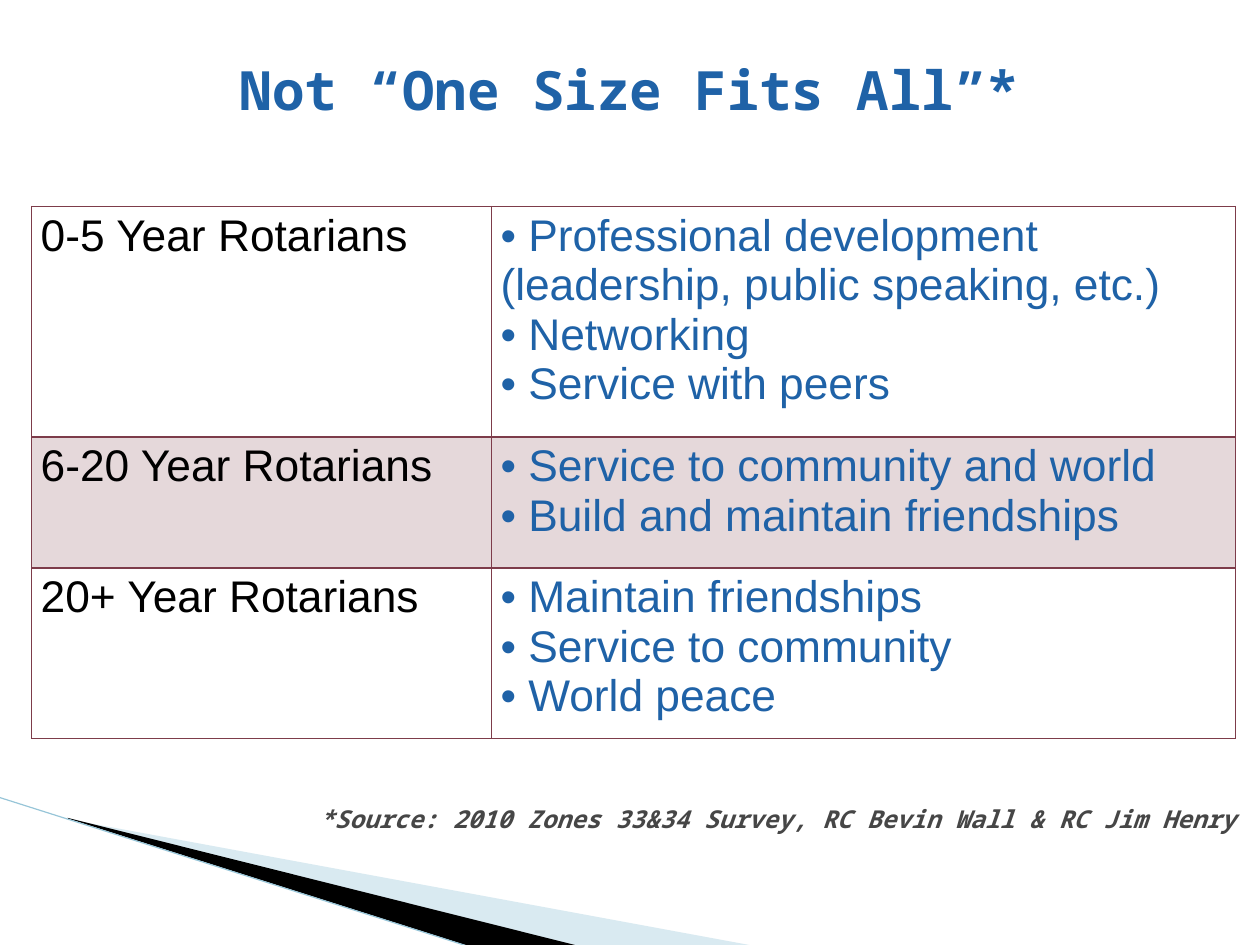
import pptx
import pptx.dml.color
import pptx.enum.text
import pptx.oxml.ns
import pptx.util
from lxml import etree

Pt = pptx.util.Pt
RGBColor = pptx.dml.color.RGBColor
qn = pptx.oxml.ns.qn
PP_ALIGN = pptx.enum.text.PP_ALIGN
MSO_ANCHOR = pptx.enum.text.MSO_ANCHOR

TITLE = "Not “One Size Fits All”*"
SOURCE = "*Source: 2010 Zones 33&34 Survey, RC Bevin Wall & RC Jim Henry"
GROUPS = [
    ("0-5 Year Rotarians", [
        "Professional development (leadership, public speaking, etc.)",
        "Networking",
        "Service with peers",
    ]),
    ("6-20 Year Rotarians", [
        "Service to community and world",
        "Build and maintain friendships",
    ]),
    ("20+ Year Rotarians", [
        "Maintain friendships",
        "Service to community",
        "World peace",
    ]),
]

BLUE = RGBColor(0x1F, 0x62, 0xA7)
BLACK = RGBColor(0, 0, 0)
GRAY = RGBColor(0x46, 0x46, 0x46)
MAROON = RGBColor(0x7D, 0x3C, 0x4A)
PALE_BLUE = RGBColor(0xA0, 0xCB, 0xDC)
LINE_BLUE = RGBColor(0x97, 0xC5, 0xD8)

WEDGES = [
    (PALE_BLUE, 40, [(56.2, 666), (609.1, 768), (466.6, 768), (56.2, 665.3)]),
    (BLACK, 100, [(54.7, 664.6), (467.3, 768), (380.9, 768.8), (55.4, 665.3)]),
]
COLUMN_WIDTHS = [373.7, 604.1]
ROW_HEIGHTS = [187.2, 106.6, 138.2]
TABLE_LEFT, TABLE_TOP = 25.9, 167.8
SLIDE_WIDTH, SLIDE_HEIGHT = 1024, 768


def fill_solid(fill, color, opacity=100):
    fill.solid()
    fill.fore_color.rgb = color
    if opacity < 100:
        element = fill._xPr.find(qn("a:solidFill"))[0]
        etree.SubElement(element, qn("a:alpha"), val=str(opacity * 1000))


def add_run(paragraph, text, size, font_name, color, bold=False, italic=False):
    run = paragraph.add_run()
    run.text = text
    font = run.font
    font.size, font.name = Pt(size), font_name
    font.bold, font.italic = bold, italic
    font.color.rgb = color


def add_text_box(slide, left, top, width, height, anchor, text, size, color, italic):
    shape = slide.shapes.add_textbox(Pt(left), Pt(top), Pt(width), Pt(height))
    frame = shape.text_frame
    frame.word_wrap = True
    frame.vertical_anchor = anchor
    frame.margin_left = frame.margin_right = Pt(10)
    frame.margin_top = frame.margin_bottom = Pt(5)
    paragraph = frame.paragraphs[0]
    paragraph.alignment = PP_ALIGN.CENTER
    add_run(paragraph, text, size, "Noto Sans Mono", color, True, italic)


def add_borders(cell, top, bottom):
    properties = cell._tc.get_or_add_tcPr()
    for side, width in (("L", 1), ("R", 1), ("T", top), ("B", bottom)):
        border = etree.SubElement(properties, qn("a:ln" + side), w=str(Pt(width)))
        fill = etree.SubElement(border, qn("a:solidFill"))
        etree.SubElement(fill, qn("a:srgbClr"), val=str(MAROON))


def add_bullet(paragraph):
    properties = paragraph._p.get_or_add_pPr()
    properties.set("marL", "0")
    properties.set("indent", "0")
    etree.SubElement(properties, qn("a:buFont"), typeface="Arial")
    etree.SubElement(properties, qn("a:buChar"), char="•")


def add_wedges(slide):
    for color, opacity, points in WEDGES:
        corners = [(Pt(x), Pt(y)) for x, y in points]
        builder = slide.shapes.build_freeform(*corners[0])
        builder.add_line_segments(corners[1:], close=True)
        wedge = builder.convert_to_shape()
        wedge.shadow.inherit = False
        wedge.line.fill.background()
        fill_solid(wedge.fill, color, opacity)
    edge = slide.shapes.add_connector(1, Pt(-0.7), Pt(648), Pt(380.2), Pt(769))
    edge.line.color.rgb = LINE_BLUE
    edge.line.width = Pt(0.95)
    etree.SubElement(edge._element.spPr, qn("a:effectLst"))


def add_group_table(slide):
    table = slide.shapes.add_table(
        len(GROUPS), 2, Pt(TABLE_LEFT), Pt(TABLE_TOP),
        Pt(sum(COLUMN_WIDTHS)), Pt(sum(ROW_HEIGHTS))).table
    table.first_row = table.horz_banding = False
    for column, width in zip(table.columns, COLUMN_WIDTHS):
        column.width = Pt(width)
    for index, (label, interests) in enumerate(GROUPS):
        table.rows[index].height = Pt(ROW_HEIGHTS[index])
        for cell in table.rows[index].cells:
            cell.margin_left = cell.margin_right = Pt(7.2)
            cell.margin_top = cell.margin_bottom = Pt(3.6)
            add_borders(cell, 2 if index == 1 else 1, 2 if index == 0 else 1)
            if index == 1:
                fill_solid(cell.fill, MAROON, 20)
            else:
                cell.fill.background()
        label_cell, interest_cell = table.rows[index].cells
        add_run(label_cell.text_frame.paragraphs[0], label, 36, "Arial", BLACK)
        frame = interest_cell.text_frame
        for position, interest in enumerate(interests):
            paragraph = frame.add_paragraph() if position else frame.paragraphs[0]
            add_bullet(paragraph)
            add_run(paragraph, " " + interest, 36, "Arial", BLUE)


def main():
    presentation = pptx.Presentation()
    presentation.slide_width = Pt(SLIDE_WIDTH)
    presentation.slide_height = Pt(SLIDE_HEIGHT)
    slide = presentation.slides.add_slide(presentation.slide_layouts[6])
    add_wedges(slide)
    add_group_table(slide)
    add_text_box(slide, 0, 24, SLIDE_WIDTH, 96, MSO_ANCHOR.MIDDLE, TITLE, 44, BLUE, False)
    add_text_box(slide, 193.7, 648, 877.7, 77.8, MSO_ANCHOR.TOP, SOURCE, 20, GRAY, True)
    presentation.save("out.pptx")


if __name__ == "__main__":
    main()
